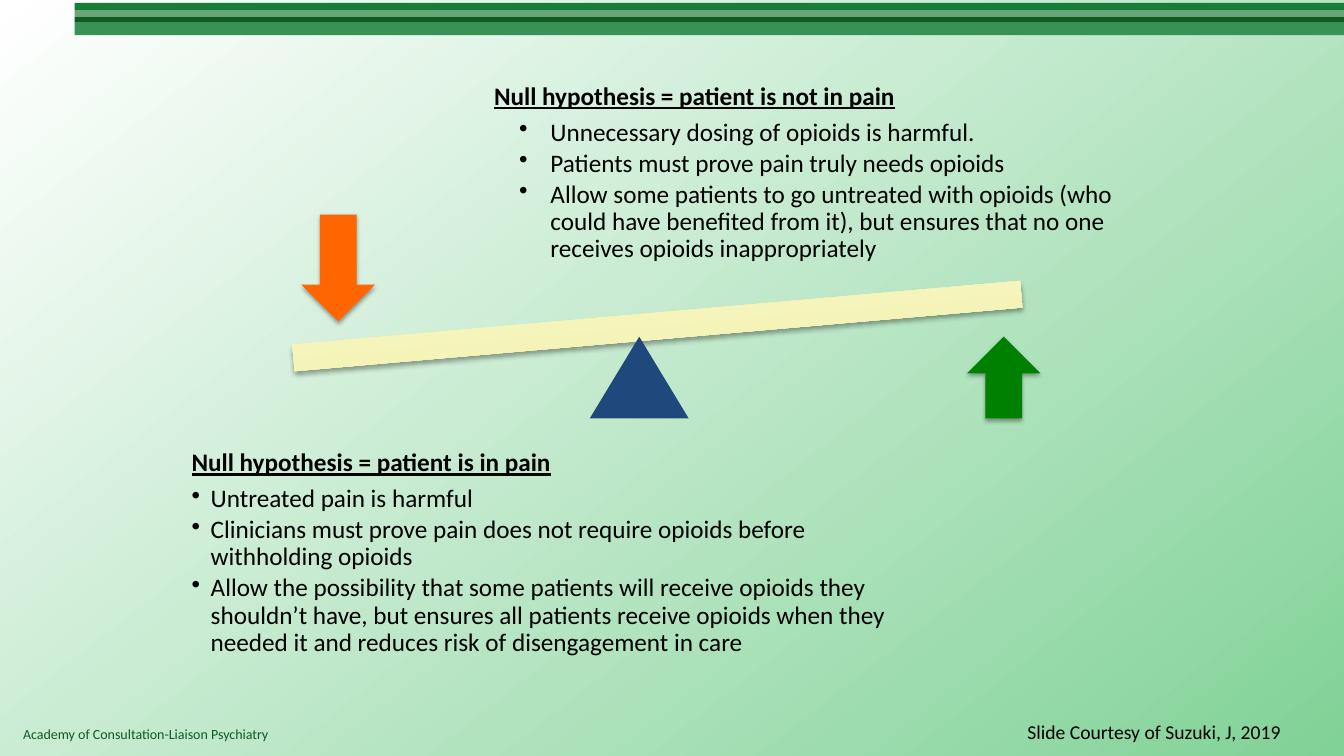
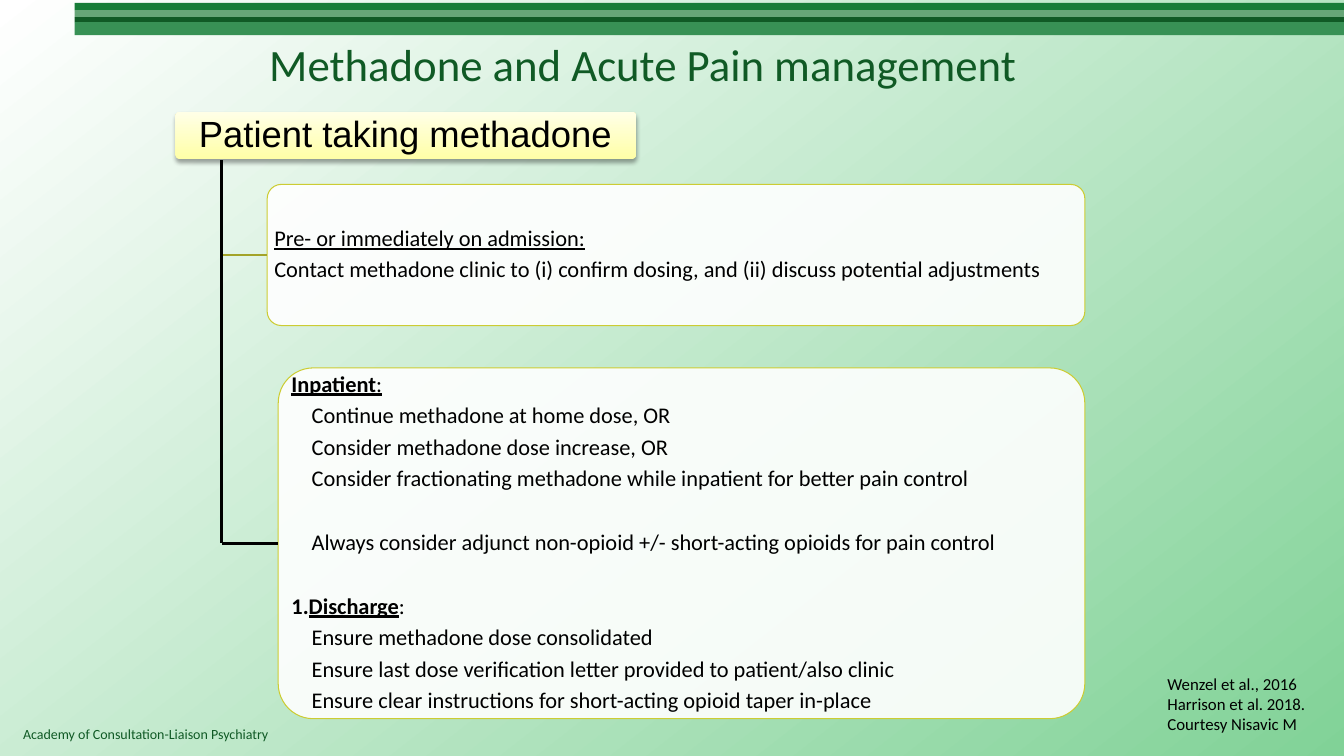
from lxml.etree import SubElement
from pptx import Presentation
from pptx.dml.color import RGBColor
from pptx.enum.shapes import MSO_CONNECTOR, MSO_SHAPE
from pptx.enum.text import MSO_ANCHOR, MSO_AUTO_SIZE, PP_ALIGN
from pptx.oxml.ns import qn
from pptx.util import Inches, Pt

# Colours
BLACK = RGBColor(0x00, 0x00, 0x00)
WHITE = RGBColor(0xFF, 0xFF, 0xFF)
DARK_GREEN = RGBColor(0x10, 0x5A, 0x25)
PALE_GREEN = RGBColor(0x81, 0xD2, 0x97)
ORANGE = RGBColor(0xFF, 0x66, 0x00)
ARROW_GREEN = RGBColor(0x00, 0x80, 0x00)
NAVY = RGBColor(0x1F, 0x49, 0x7D)
OLIVE = RGBColor(0xA3, 0xA3, 0x29)
CARD_EDGE = RGBColor(0xCC, 0xCC, 0x33)
BEAM_SHADES = RGBColor(0xEA, 0xEA, 0xA6), RGBColor(0xFF, 0xFF, 0xCE)
HEADER_SHADES = RGBColor(0xFF, 0xFF, 0xA7), RGBColor(0xFF, 0xFF, 0xE7)

# Shared content: band heights with their colours, and the footer
BANDS = [
    (0.07, RGBColor(0x17, 0x7D, 0x38)),
    (0.07, RGBColor(0x66, 0xA6, 0x77)),
    (0.05, DARK_GREEN),
    (0.13, RGBColor(0x38, 0x91, 0x55)),
]
FOOTER = "Academy of Consultation-Liaison Psychiatry"

# Slide 1: box, bullet text position, hanging indent, heading, bullets
HYPOTHESES = [
    ((4.76, 0.38, 6.9, 2.68), 0.56, 0.31,
     "Null hypothesis = patient is not in pain",
     ["Unnecessary dosing of opioids is harmful.",
      "Patients must prove pain truly needs opioids",
      "Allow some patients to go untreated with opioids (who could have "
      "benefited from it), but ensures that no one receives opioids "
      "inappropriately"]),
    ((1.76, 4.15, 7.2, 2.68), 0.19, 0.19,
     "Null hypothesis = patient is in pain",
     ["Untreated pain is harmful",
      "Clinicians must prove pain does not require opioids before "
      "withholding opioids",
      "Allow the possibility that some patients will receive opioids they "
      "shouldn’t have, but ensures all patients receive opioids when they "
      "needed it and reduces risk of disengagement in care"]),
]
COURTESY = "Slide Courtesy of Suzuki, J, 2019"

# Slide 2: each card line is (text, format)
TITLE = "Methadone and Acute Pain management"
HEADER = "Patient taking methadone"
STEP_GAP, SECTION_GAP = 5.3, 28.2
STEP = {"left": 0.2}
SECTION_END = {"left": 0.2, "after": SECTION_GAP}
CARDS = [
    ((2.65, 1.83, 8.11, 1.4), OLIVE, [
        ("Pre- or immediately on admission:", {"underline": True}),
        ("Contact methadone clinic to (i) confirm dosing, and (ii) discuss "
         "potential adjustments", {}),
    ]),
    ((2.76, 3.65, 8, 3.48), BLACK, [
        ("Inpatient", {"bold": True, "underline": True,
                       "tail": ":", "tail_underline": True}),
        ("Continue methadone at home dose, OR", STEP),
        ("Consider methadone dose increase, OR", STEP),
        ("Consider fractionating methadone while inpatient for better pain "
         "control", SECTION_END),
        ("Always consider adjunct non-opioid +/- short-acting opioids for "
         "pain control", SECTION_END),
        ("Discharge", {"bold": True, "underline": True, "tail": ":",
                       "bullet": ("a:buAutoNum", "type", "arabicPeriod")}),
        ("Ensure methadone dose consolidated", STEP),
        ("Ensure last dose verification letter provided to patient/also "
         "clinic", STEP),
        ("Ensure clear instructions for short-acting opioid taper in-place",
         STEP),
    ]),
]
SOURCES = ["Wenzel et al., 2016", "Harrison et al. 2018.",
           "Courtesy Nisavic M"]


def write(frame, text, *, size, color=BLACK, font="Calibri", bold=False,
          underline=False, tail="", tail_underline=False, align=PP_ALIGN.LEFT,
          spacing=None, after=0, left=0, hanging=0, bullet=None):
    """Add one paragraph; the tail is a plain-weight run at its end."""
    first = frame.paragraphs[0]
    paragraph = frame.add_paragraph() if first.runs else first
    paragraph.alignment = align
    paragraph.line_spacing = spacing
    paragraph.space_after = Pt(after)
    properties = paragraph._p.get_or_add_pPr()
    properties.set("marL", str(Inches(left)))
    properties.set("indent", str(-Inches(hanging)))
    if bullet:
        tag, attribute, value = bullet
        SubElement(properties, qn(tag)).set(attribute, value)
    for words, heavy, lined in ((text, bold, underline),
                                (tail, False, tail_underline)):
        if words:
            run = paragraph.add_run()
            run.text = words
            run.font.name, run.font.size = font, Pt(size)
            run.font.bold, run.font.underline = heavy, lined
            run.font.color.rgb = color


def set_frame(frame, x_inset=0.1, y_inset=0.05, anchor=MSO_ANCHOR.TOP,
              wrap=True):
    frame.word_wrap = wrap
    frame.auto_size = MSO_AUTO_SIZE.NONE
    frame.vertical_anchor = anchor
    frame.margin_left = frame.margin_right = Inches(x_inset)
    frame.margin_top = frame.margin_bottom = Inches(y_inset)
    return frame


def add_text_area(slide, box, **options):
    area = slide.shapes.add_textbox(*map(Inches, box))
    set_frame(area.text_frame, **options)
    return area


def shade(fill, clockwise, colors):
    fill.gradient()
    fill.gradient_angle = (360 - clockwise) % 360
    for stop, position, color in zip(fill.gradient_stops, (0, 1), colors):
        stop.color.rgb = color
        stop.position = position


def add_figure(slide, preset, box, color=None, shades=None, shadow=False):
    figure = slide.shapes.add_shape(preset, *map(Inches, box))
    figure.line.fill.background()
    if shades:
        shade(figure.fill, 270, shades)
    else:
        figure.fill.solid()
        figure.fill.fore_color.rgb = color
    figure.shadow.inherit = False
    if shadow:
        effects = figure.element.spPr.find(qn("a:effectLst"))
        outer = SubElement(effects, qn("a:outerShdw"), blurRad=str(Pt(3.1)),
                           dist=str(Pt(1.8)), dir="5400000", rotWithShape="0")
        tint = SubElement(outer, qn("a:srgbClr"), val=str(BLACK))
        SubElement(tint, qn("a:alpha"), val="35000")
    return figure


def add_rule(slide, start, end, color):
    rule = slide.shapes.add_connector(MSO_CONNECTOR.STRAIGHT,
                                      *map(Inches, start + end))
    rule.line.color.rgb = color
    rule.line.width = Pt(2)
    SubElement(rule.element.spPr, qn("a:effectLst"))
    return rule


def dress_master(master, slide):
    """Set the background, then build bands and footer and move them over."""
    shade(master.background.fill, 52, (WHITE, PALE_GREEN))
    parts, top = [], 0.03
    for height, color in BANDS:
        parts.append(add_figure(slide, MSO_SHAPE.RECTANGLE,
                                (0.74, top, 12.59, height), color))
        top += height
    footer = add_text_area(slide, (0.13, 7.15, 9.25, 0.27))
    write(footer.text_frame, FOOTER, size=10, color=DARK_GREEN)
    for number, part in enumerate(parts + [footer], start=101):
        part.element.nvSpPr.cNvPr.set("id", str(number))
        master.shapes.element.append(part.element)


def build_balance(slide):
    # Seesaw
    beam = add_figure(slide, MSO_SHAPE.MATH_MINUS, (1.59, 2.67, 9.86, 1.13),
                      shades=BEAM_SHADES, shadow=True)
    beam.rotation = 355
    add_figure(slide, MSO_SHAPE.DOWN_ARROW, (2.99, 2.13, 0.73, 1.06), ORANGE,
               shadow=True)
    add_figure(slide, MSO_SHAPE.UP_ARROW, (9.59, 3.34, 0.73, 0.81),
               ARROW_GREEN, shadow=True)
    add_figure(slide, MSO_SHAPE.ISOSCELES_TRIANGLE, (5.85, 3.34, 0.98, 0.81),
               NAVY)

    # Hypotheses
    for box, left, hanging, heading, points in HYPOTHESES:
        frame = add_text_area(slide, box, x_inset=0.14, y_inset=0.14,
                              anchor=MSO_ANCHOR.MIDDLE).text_frame
        write(frame, heading, size=18, bold=True, underline=True,
              spacing=0.9, after=6.3)
        for point in points:
            write(frame, point, size=18, spacing=0.9, after=2.7, left=left,
                  hanging=hanging, bullet=("a:buChar", "char", "•"))

    courtesy = add_text_area(slide, (10.09, 7.09, 2.78, 0.34), wrap=False)
    write(courtesy.text_frame, COURTESY, size=14)


def build_methadone(slide):
    # Title
    title = slide.shapes.title
    title.left, title.top, title.width, title.height = map(
        Inches, (2.57, 0, 8.32, 1.26))
    set_frame(title.text_frame, anchor=MSO_ANCHOR.MIDDLE)
    write(title.text_frame, TITLE, size=32, color=DARK_GREEN)

    # Header
    header = add_figure(slide, MSO_SHAPE.ROUNDED_RECTANGLE,
                        (1.74, 1.11, 4.57, 0.47), shades=HEADER_SHADES,
                        shadow=True)
    header.adjustments[0] = 0.1
    set_frame(header.text_frame, 0.05, 0.04, MSO_ANCHOR.MIDDLE)
    write(header.text_frame, HEADER, size=26, font="Arial",
          align=PP_ALIGN.CENTER, spacing=0.9)

    # Cards, each with a branch from the trunk
    trunk_x = 2.2
    for box, branch_color, lines in CARDS:
        card = add_figure(slide, MSO_SHAPE.ROUNDED_RECTANGLE, box, WHITE)
        card.adjustments[0] = 0.1
        tint = card.element.spPr.find(".//" + qn("a:srgbClr"))
        SubElement(tint, qn("a:alpha"), val="90000")
        card.line.color.rgb = CARD_EDGE
        card.line.width = Pt(0.75)
        set_frame(card.text_frame, 0.03, 0.02, MSO_ANCHOR.MIDDLE)
        for text, style in lines:
            write(card.text_frame, text, size=16, spacing=0.9,
                  **{"after": STEP_GAP, **style})
        left, top, _, height = box
        middle = top + height / 2
        branch = add_rule(slide, (trunk_x, middle), (left, middle),
                          branch_color)
        branch.end_connect(card, 1)
    add_rule(slide, (trunk_x, 1.59), (trunk_x, middle), BLACK)

    # Sources
    sources = add_text_area(slide, (11.48, 6.63, 1.67, 0.71))
    for source in SOURCES:
        write(sources.text_frame, source, size=12)


def main():
    deck = Presentation()
    deck.slide_width, deck.slide_height = Inches(13.33), Inches(7.5)
    title_only, blank = deck.slide_layouts[5], deck.slide_layouts[6]
    balance = deck.slides.add_slide(blank)
    dress_master(deck.slide_master, balance)
    build_balance(balance)
    build_methadone(deck.slides.add_slide(title_only))
    deck.save("out.pptx")


if __name__ == "__main__":
    main()
